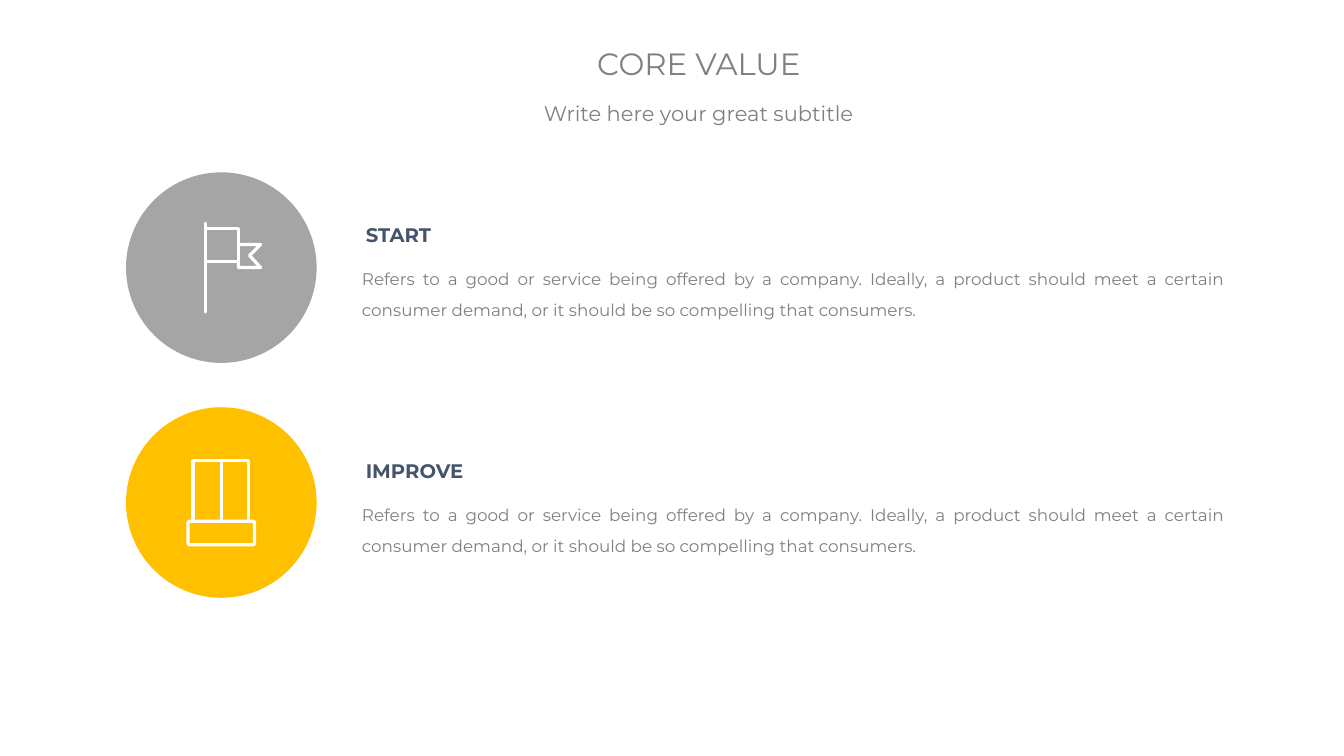
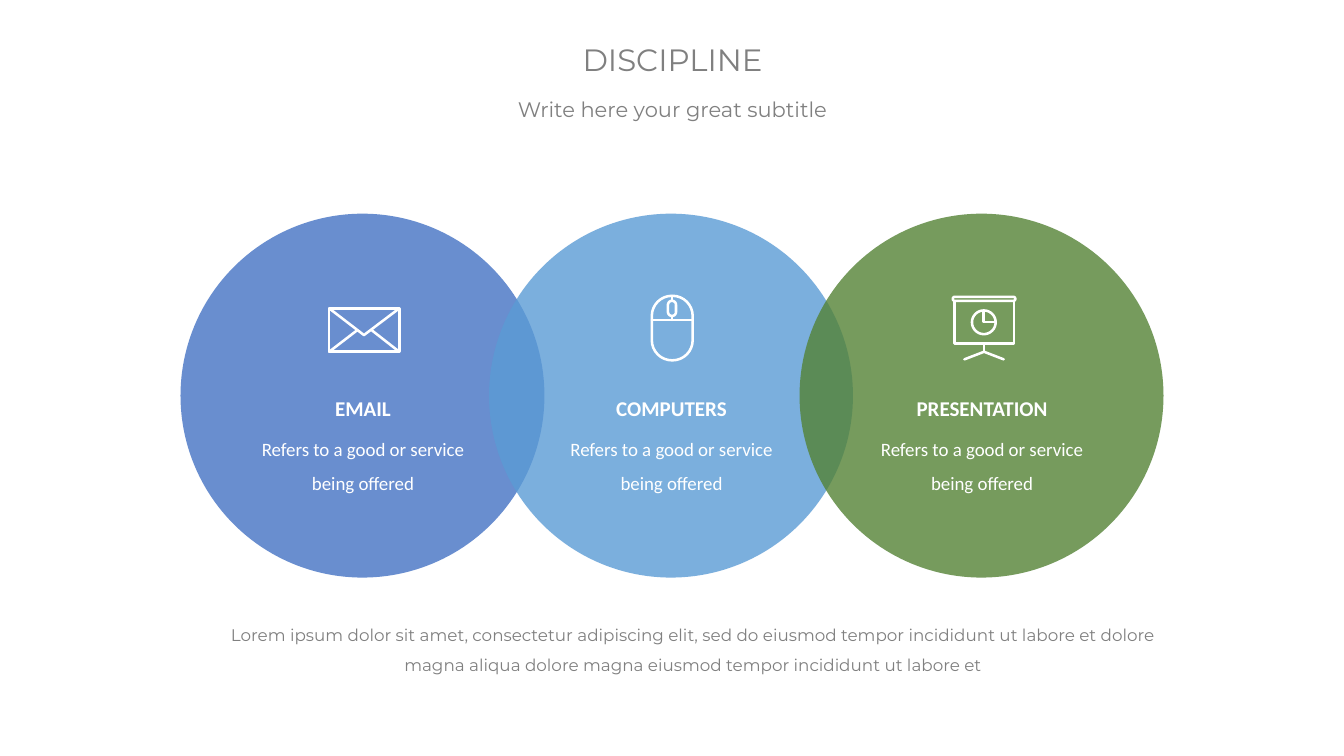
from math import cos, pi, sin

from lxml import etree
from pptx import Presentation
from pptx.dml.color import RGBColor
from pptx.enum.shapes import MSO_SHAPE
from pptx.enum.text import MSO_ANCHOR, PP_ALIGN
from pptx.oxml.ns import qn
from pptx.util import Inches, Pt

OVAL = MSO_SHAPE.OVAL
LEFT, CENTER, JUSTIFY = PP_ALIGN.LEFT, PP_ALIGN.CENTER, PP_ALIGN.JUSTIFY
TOP, MIDDLE = MSO_ANCHOR.TOP, MSO_ANCHOR.MIDDLE

WHITE, GREY, NAVY = "FFFFFF", "808080", "44546A"
HEAD_FONT, CIRCLE_FONT = "Montserrat", "Calibri"

# Content
SUBTITLE = "Write here your great subtitle"
VALUE_TEXT = ("Refers to a good or service being offered by a company. Ideally, a product "
              "should meet a certain consumer demand, or it should be so compelling that consumers.")
CORE_VALUES = [
    ("START", VALUE_TEXT, "A5A5A5", "flag"),
    ("IMPROVE", VALUE_TEXT, "FFC000", "window"),
]
DISCIPLINE_TEXT = "Refers to a good or service being offered"
DISCIPLINES = [
    ("EMAIL", DISCIPLINE_TEXT, "4472C4", "envelope", 1.79),
    ("COMPUTERS", DISCIPLINE_TEXT, "5B9BD5", "mouse", 4.85),
    ("PRESENTATION", DISCIPLINE_TEXT, "548235", "screen", 7.93),
]
CLOSING = ("Lorem ipsum dolor sit amet, consectetur adipiscing elit, sed do eiusmod tempor "
           "incididunt ut labore et dolore magna aliqua dolore magna eiusmod tempor "
           "incididunt ut labore et")


def box(left, top, right, bottom, radius=0, steps=8):
    """Closed outline of a box, with rounded corners if a radius is given."""
    corners = [(right - radius, bottom - radius), (left + radius, bottom - radius),
               (left + radius, top + radius), (right - radius, top + radius)]
    points = []
    for quarter, (x, y) in enumerate(corners):
        for step in range(steps + 1 if radius else 1):
            angle = (quarter + step / steps) * pi / 2
            points.append((x + radius * cos(angle), y + radius * sin(angle)))
    return points + points[:1]


# Icons, in hundredths of an inch from the circle centre:
# each is a list of outlines, and each outline a list of strokes
ICONS = {
    "flag": [[
        [(-16, -44), (-16, 44)], box(-16, -39, 17, -6),
        [(17, -23), (39, -23), (28, -12), (39, 0), (17, 0), (17, -6)]]],
    "window": [[
        box(-28, -41.5, 27, 18.5), [(0, -41.5), (0, 18.5)], box(-33, 18.5, 33, 42, 2)]],
    "envelope": [[
        box(-33, -86.5, 36.5, -43.5), [(-33, -86.5), (1.5, -60), (36.5, -86.5)],
        [(-33, -43.5), (-5, -65)], [(36.5, -43.5), (9, -65)]]],
    "mouse": [[
        box(-19, -99, 21.5, -35, 20), box(-3, -94, 5, -79, 4),
        [(-19, -75), (21.5, -75)], [(1, -99), (1, -94)], [(1, -79), (1, -75)]]],
    "screen": [
        [box(-27, -94, 32, -51.5), box(-28.5, -98, 33.5, -94, 2),
         [(2.5, -51.5), (2.5, -43.5)], [(-17, -36), (2.5, -43.5), (22, -36)]],
        [box(-9.5, -84.5, 14, -61, 11.7), [(2, -84), (2, -73), (14, -73)]]],
}


def rgb(value):
    return RGBColor.from_string(value)


def add_text(slide, place, text, size, color, font=HEAD_FONT, bold=False, align=CENTER,
             anchor=MIDDLE, spacing=None, before=None, insets=(0.1, 0.05)):
    frame = slide.shapes.add_textbox(*map(Inches, place)).text_frame
    frame.word_wrap = True
    frame.vertical_anchor = anchor
    frame.margin_left = frame.margin_right = Inches(insets[0])
    frame.margin_top = frame.margin_bottom = Inches(insets[1])
    paragraph = frame.paragraphs[0]
    paragraph.text = text
    paragraph.alignment = align
    paragraph.line_spacing = spacing
    paragraph.space_before = before
    paragraph.font.name, paragraph.font.size = font, Pt(size)
    paragraph.font.bold = bold
    paragraph.font.color.rgb = rgb(color)


def add_header(slide, title, center, top):
    add_text(slide, (center - 2.5, top, 5, 0.47), title, 22, GREY)
    add_text(slide, (center - 2.5, top + 0.56, 5, 0.35), SUBTITLE, 15, GREY)


def add_circle(slide, left, top, size, color, opacity=100):
    circle = slide.shapes.add_shape(OVAL, *map(Inches, (left, top, size, size)))
    circle.shadow.inherit = False
    circle.fill.solid()
    circle.fill.fore_color.rgb = rgb(color)
    circle.line.fill.background()
    if opacity < 100:
        tint = circle.fill._xPr.find(".//" + qn("a:srgbClr"))
        etree.SubElement(tint, qn("a:alpha"), val=str(opacity * 1000))


def add_icon(slide, icon, center_x, center_y, width):
    def place(point):
        return Inches(center_x + point[0] / 100), Inches(center_y + point[1] / 100)

    for strokes in ICONS[icon]:
        builder = slide.shapes.build_freeform(*place(strokes[0][0]))
        for number, stroke in enumerate(strokes):
            if number:
                builder.move_to(*place(stroke[0]))
            builder.add_line_segments(map(place, stroke[1:]), close=False)
        outline = builder.convert_to_shape()
        outline.shadow.inherit = False
        outline.fill.background()
        outline.line.color.rgb = rgb(WHITE)
        outline.line.width = Pt(width)
        line = outline.line._get_or_add_ln()
        line.set("cap", "rnd")
        etree.SubElement(line, qn("a:round"))


def build_core_value(slide):
    size, left = 1.89, 1.25
    for row, (label, text, color, icon) in enumerate(CORE_VALUES):
        top = 1.71 + row * 2.33
        text_top = 2.16 + row * 2.34
        add_circle(slide, left, top, size, color)
        add_icon(slide, icon, left + size / 2, top + size / 2, 2.3)
        add_text(slide, (3.53, text_top, 4, 0.34), label, 14, NAVY, bold=True, align=LEFT)
        add_text(slide, (3.47, text_top + 0.35, 8.8, 0.69), text, 12, GREY, align=JUSTIFY,
                 anchor=TOP, spacing=1.5, before=Pt(2.4), insets=(0.12, 0.06))
    add_header(slide, "CORE VALUE", 6.93, 0.39)


def build_discipline(slide):
    size, top = 3.61, 2.12
    for _, _, color, _, left in DISCIPLINES:
        add_circle(slide, left, top, size, color, opacity=80)
    for label, text, _, icon, left in DISCIPLINES:
        add_icon(slide, icon, left + size / 2, top + size / 2, 1.8)
        add_text(slide, (left + 0.49, top + 1.65, 2.64, 0.43), label, 15, WHITE,
                 CIRCLE_FONT, bold=True, spacing=1.5)
        add_text(slide, (left + 0.49, top + 2.05, 2.64, 0.76), text, 13.5, WHITE,
                 CIRCLE_FONT, anchor=TOP, spacing=1.5, before=Pt(2.7), insets=(0.12, 0.06))
    add_header(slide, "DISCIPLINE", 6.67, 0.35)
    add_text(slide, (2.17, 6.05, 9.41, 0.67), CLOSING, 12, GREY, anchor=TOP, spacing=1.5)


def main():
    deck = Presentation()
    deck.slide_width, deck.slide_height = Inches(13.33), Inches(7.5)
    for build in (build_core_value, build_discipline):
        build(deck.slides.add_slide(deck.slide_layouts[6]))
    deck.save("out.pptx")


if __name__ == "__main__":
    main()
